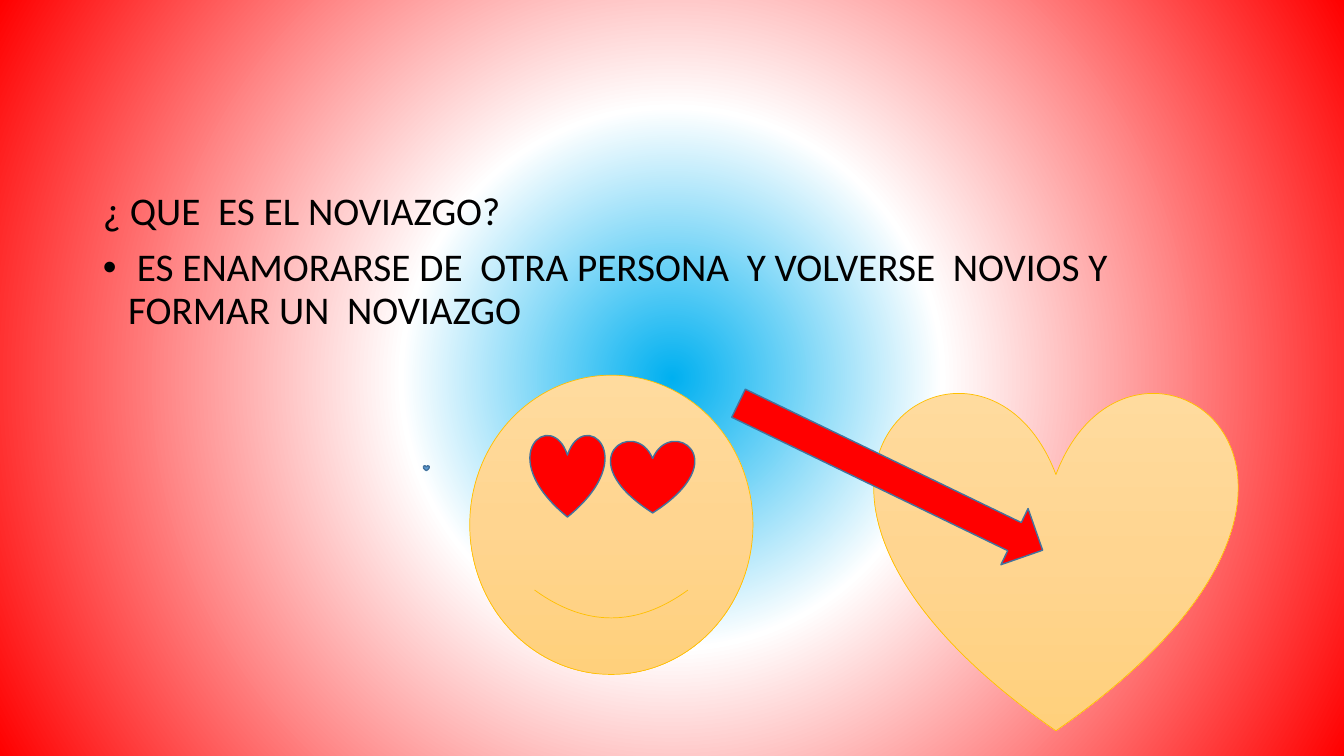
from lxml.etree import SubElement
from pptx import Presentation
from pptx.dml.color import RGBColor
from pptx.enum.shapes import MSO_SHAPE
from pptx.enum.text import MSO_AUTO_SIZE
from pptx.oxml.ns import qn
from pptx.util import Pt

BLACK = RGBColor(0x00, 0x00, 0x00)
RED = RGBColor(0xFF, 0x00, 0x00)
WHITE = RGBColor(0xFF, 0xFF, 0xFF)
SKY = RGBColor(0x00, 0xB0, 0xF0)
BLUE = RGBColor(0x5B, 0x9B, 0xD5)
STEEL = RGBColor(0x43, 0x73, 0x9E)
GOLD = RGBColor(0xFF, 0xC0, 0x00)
PEACH_LIGHT = RGBColor(0xFF, 0xDB, 0x9E)
PEACH = RGBColor(0xFF, 0xD5, 0x90)
PEACH_DARK = RGBColor(0xFF, 0xD0, 0x7C)

BACKDROP = [(0, SKY), (35, WHITE), (100, RED)]
SKIN = [(0, PEACH_LIGHT), (50, PEACH), (100, PEACH_DARK)]


class SlideBuilder:
    font_name = "Calibri"
    font_size = Pt(28)

    def __init__(self, page):
        self.page = page

    def gradient(self, fill, element, stops, circular=False):
        fill.gradient()
        gradient = element.find(".//" + qn("a:gradFill"))
        for child in list(gradient):
            gradient.remove(child)
        stop_list = SubElement(gradient, qn("a:gsLst"))
        for position, color in stops:
            stop = SubElement(stop_list, qn("a:gs"), pos=str(position * 1000))
            SubElement(stop, qn("a:srgbClr"), val=str(color))
        if circular:
            center = SubElement(gradient, qn("a:path"), path="circle")
            sides = dict.fromkeys("ltrb", "50000")
            SubElement(center, qn("a:fillToRect"), **sides)
        else:
            SubElement(gradient, qn("a:lin"), ang="5400000", scaled="0")

    def background(self, stops):
        self.gradient(self.page.background.fill, self.page.element, stops, True)

    def body(self, left, top, width, height, lines):
        box = self.page.placeholders[1]
        box.left, box.top, box.width, box.height = map(Pt, (left, top, width, height))
        frame = box.text_frame
        frame.word_wrap = True
        frame.auto_size = MSO_AUTO_SIZE.NONE
        frame.text = "\n".join(text for text, bulleted in lines)
        for para, (text, bulleted) in zip(frame.paragraphs, lines):
            para.line_spacing = 0.9
            para.space_before = Pt(10)
            self.bullet(para, bulleted)
            para.font.name = self.font_name
            para.font.size = self.font_size
            para.font.color.rgb = BLACK

    def bullet(self, para, bulleted):
        properties = para._p.get_or_add_pPr()
        indent = Pt(18) if bulleted else 0
        properties.set("marL", str(indent))
        properties.set("indent", str(-indent))
        if bulleted:
            SubElement(properties, qn("a:buFont"), typeface="Arial")
            SubElement(properties, qn("a:buChar"), char="•")
        else:
            SubElement(properties, qn("a:buNone"))

    def shape(self, kind, left, top, width, height, color, line=STEEL, weight=1, rotation=0):
        shape = self.page.shapes.add_shape(kind, *map(Pt, (left, top, width, height)))
        shape.shadow.inherit = False
        shape.rotation = rotation
        if isinstance(color, RGBColor):
            shape.fill.solid()
            shape.fill.fore_color.rgb = color
        else:
            self.gradient(shape.fill, shape.element, color)
        shape.line.color.rgb = line
        shape.line.width = Pt(weight)


def main():
    deck = Presentation()
    deck.slide_width, deck.slide_height = Pt(960), Pt(540)
    page = deck.slides.add_slide(deck.slide_layouts[1])
    title = page.shapes.title.element
    title.getparent().remove(title)

    builder = SlideBuilder(page)
    builder.background(BACKDROP)
    builder.body(66.24, 133.2, 828, 342.72, [
        ("¿ QUE  ES EL NOVIAZGO?", False),
        (" ES ENAMORARSE DE  OTRA PERSONA  Y VOLVERSE  NOVIOS Y FORMAR UN  NOVIAZGO", True),
    ])
    builder.shape(MSO_SHAPE.HEART, 625, 278, 258.5, 244, SKIN, GOLD, 0.5)
    builder.shape(MSO_SHAPE.RIGHT_ARROW, 515.5, 318.25, 241.25, 44.6, RED, rotation=25.8)
    builder.shape(MSO_SHAPE.SMILEY_FACE, 335.5, 268, 202.3, 213.8, SKIN, GOLD, 0.5)
    builder.shape(MSO_SHAPE.HEART, 302.4, 332.6, 4.3, 3.6, BLUE)
    builder.shape(MSO_SHAPE.HEART, 378.7, 310.3, 53.3, 59, RED)
    builder.shape(MSO_SHAPE.HEART, 436.3, 314.6, 59.8, 51.8, RED)
    deck.save("out.pptx")


if __name__ == "__main__":
    main()
